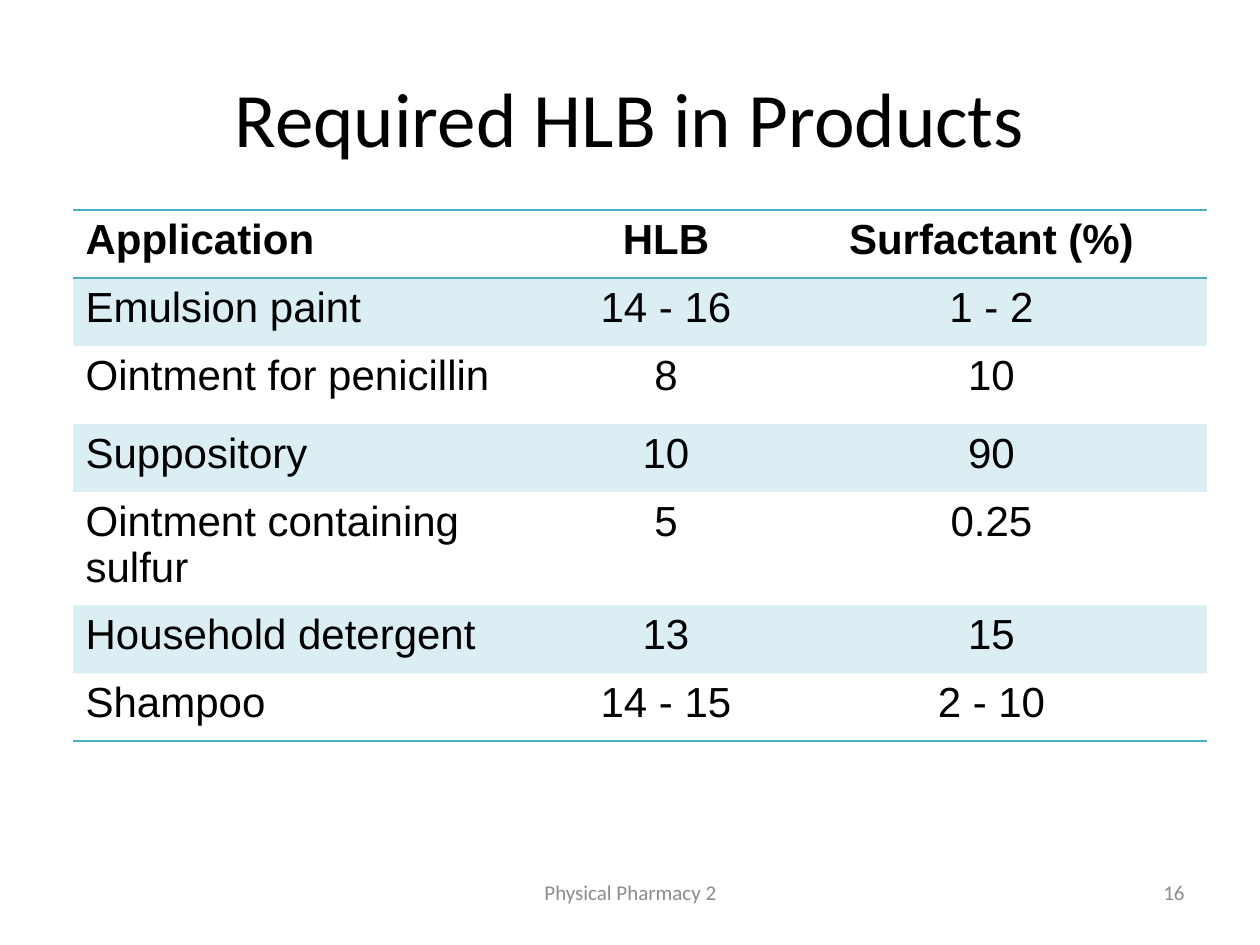
from lxml.etree import SubElement as Sub
from pptx import Presentation
from pptx.dml.color import RGBColor
from pptx.enum.text import MSO_ANCHOR as Anchor, PP_ALIGN as Align
from pptx.oxml import parse_xml
from pptx.oxml.ns import nsdecls, qn
from pptx.util import Pt

PX = 914400 / 126
BLACK = RGBColor(0x00, 0x00, 0x00)
GRAY = RGBColor(0x8C, 0x8C, 0x8C)
TEAL = RGBColor(0x4B, 0xAC, 0xC6)
PLAIN = "{2D5ABB26-0587-4C30-8999-92F81FD0307C}"

COLS = (483, 220, 431)
ROWS = (
    (68, "Application", "HLB", "Surfactant (%)"),
    (68, "Emulsion paint", "14 - 16", "1 - 2"),
    (78, "Ointment for penicillin", "8", "10"),
    (68, "Suppository", "10", "90"),
    (78, "Ointment containing sulfur", "5", "0.25"),
    (68, "Household detergent", "13", "15"),
    (68, "Shampoo", "14 - 15", "2 - 10"),
)


def emu(px):
    """Turn px into EMU."""
    return round(px * PX)


def style(para, face, size, color, align, bold=False):
    """Set the look of a paragraph and its runs."""
    para.alignment = align
    for run in para.runs:
        font = run.font
        font.name, font.size, font.bold = face, Pt(size), bold
        font.color.rgb = color


def label(slide, box, text, size, color, align):
    """Place one line of text in a box, centred in height."""
    frame = slide.shapes.add_textbox(*map(emu, box)).text_frame
    frame.word_wrap = True
    frame.vertical_anchor = Anchor.MIDDLE
    frame.text = text
    style(frame.paragraphs[0], "Calibri", size, color, align)


def rule(cell, *sides):
    """Draw teal lines on the given sides of a cell, top first."""
    props = cell._tc.get_or_add_tcPr()
    for spot, side in enumerate(sides):
        line = parse_xml(
            f'<a:ln{side} {nsdecls("a")} w="12700"><a:solidFill>'
            f'<a:srgbClr val="{TEAL}"/></a:solidFill></a:ln{side}>'
        )
        props.insert(spot, line)


def tint(cell):
    """Fill a cell with teal at 20% strength."""
    cell.fill.solid()
    cell.fill.fore_color.rgb = TEAL
    color = cell._tc.tcPr.find(f"{qn('a:solidFill')}/{qn('a:srgbClr')}")
    Sub(color, qn("a:alpha"), val="20000")


def grid(slide, left, top):
    """Place the table with its striped rows and rules."""
    wide, high = sum(COLS), sum(row[0] for row in ROWS)
    box = map(emu, (left, top, wide, high))
    table = slide.shapes.add_table(len(ROWS), len(COLS), *box).table
    table._tbl.tblPr.find(qn("a:tableStyleId")).text = PLAIN
    for col, width in zip(table.columns, COLS):
        col.width = emu(width)
    for r, (height, *texts) in enumerate(ROWS):
        table.rows[r].height = emu(height)
        for c, text in enumerate(texts):
            cell = table.cell(r, c)
            cell.text = text
            align = Align.CENTER if c else Align.LEFT
            style(cell.text_frame.paragraphs[0], "Arial", 24, BLACK, align, r == 0)
            if r % 2:
                tint(cell)
            else:
                cell.fill.background()
            if r == 0:
                rule(cell, "T", "B")
            elif r == len(ROWS) - 1:
                rule(cell, "B")


def footer(slide, top, height):
    """Place the course name and the page number."""
    label(slide, (431, top, 399, height), "Physical Pharmacy 2", 12, GRAY, Align.CENTER)
    label(slide, (903, top, 294, height), "16", 12, GRAY, Align.RIGHT)


def main():
    """Build the slide and save it."""
    deck = Presentation()
    deck.slide_width, deck.slide_height = emu(1260), emu(945)
    slide = deck.slides.add_slide(deck.slide_layouts[6])
    title = (63, 38, 1134, 158)
    label(slide, title, "Required HLB in Products", 44, BLACK, Align.CENTER)
    grid(slide, 73, 210)
    footer(slide, 861, 63)
    deck.save("out.pptx")


if __name__ == "__main__":
    main()
